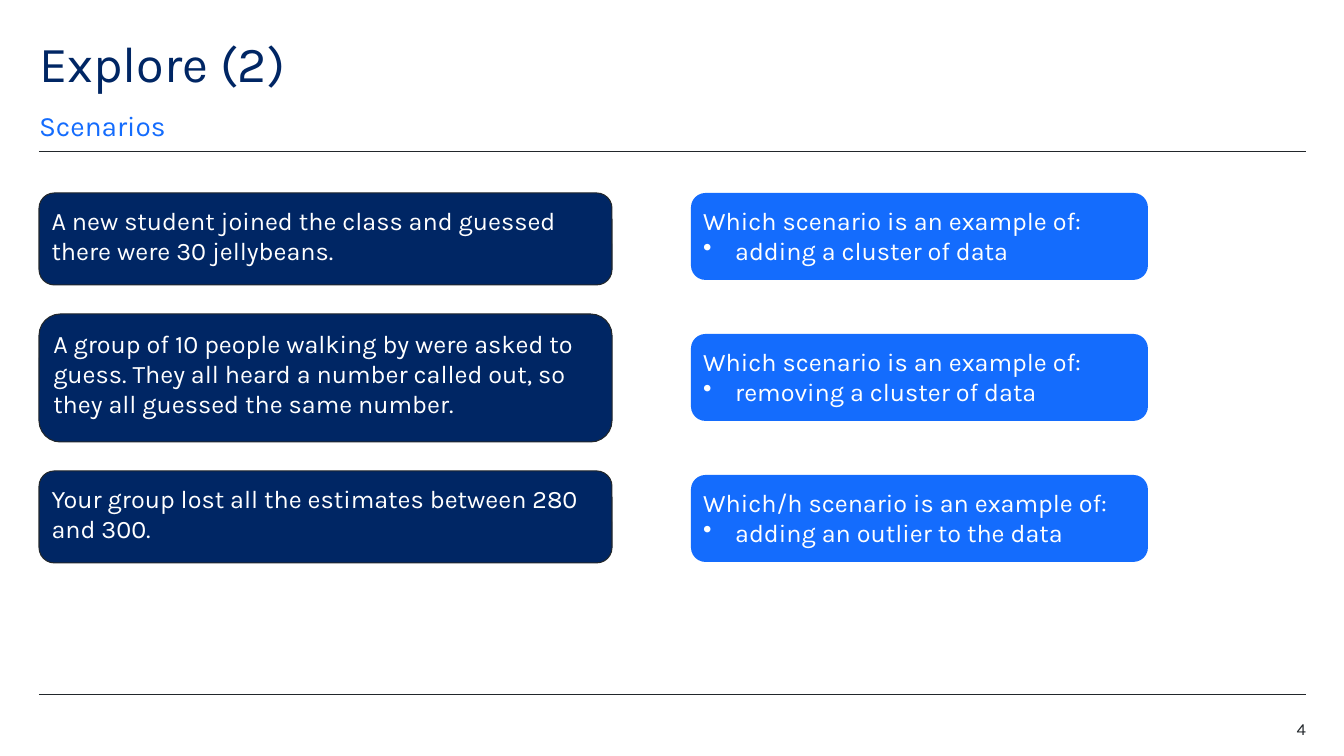
from dataclasses import dataclass

import pptx
import pptx.dml.color
import pptx.enum.shapes
import pptx.enum.text
import pptx.oxml.ns
import pptx.util
from lxml import etree

ANCHOR = pptx.enum.text.MSO_ANCHOR
ALIGN = pptx.enum.text.PP_ALIGN
EMU_PER_PX = 914400 / 100.8


@dataclass(frozen=True)
class Theme:
    font: str = "Karla"
    navy: str = "002664"
    blue: str = "146CFD"
    ink: str = "22272B"
    white: str = "FFFFFF"
    title: int = 36
    subtitle: int = 20
    body: int = 18
    small: int = 12


def px(n):
    return pptx.util.Emu(round(n * EMU_PER_PX))


def rgb(color):
    return pptx.dml.color.RGBColor.from_string(color)


def add_bullet(p, indent):
    pPr = p._p.get_or_add_pPr()
    pPr.set("marL", str(px(indent)))
    pPr.set("indent", str(-px(indent)))
    bu = etree.SubElement(pPr, pptx.oxml.ns.qn("a:buChar"))
    bu.set("char", "•")


class SlideBuilder:
    def __init__(self, prs, theme):
        self.theme = theme
        self.s = prs.slides.add_slide(prs.slide_layouts[6])

    def frame(self, sp, inset, anchor=ANCHOR.TOP):
        tf = sp.text_frame
        tf.word_wrap = True
        tf.vertical_anchor = anchor
        tf.margin_left = tf.margin_top = px(inset)
        tf.margin_right = tf.margin_bottom = px(inset)
        return tf

    def style(self, p, size, color, align=ALIGN.LEFT):
        p.alignment = align
        for r in p.runs:
            r.font.name = self.theme.font
            r.font.size = pptx.util.Pt(size)
            r.font.color.rgb = rgb(color)

    def text(self, box, text, size, color, anchor=ANCHOR.TOP, align=ALIGN.LEFT):
        sp = self.s.shapes.add_textbox(*map(px, box))
        p = self.frame(sp, 0, anchor).paragraphs[0]
        p.text = text
        self.style(p, size, color, align)
        return p

    def rule(self, x1, x2, y):
        line = self.s.shapes.add_connector(
            pptx.enum.shapes.MSO_CONNECTOR.STRAIGHT, px(x1), px(y), px(x2), px(y))
        line.line.color.rgb = rgb(self.theme.ink)
        line.line.width = pptx.util.Pt(0.5)
        etree.SubElement(line._element.spPr, pptx.oxml.ns.qn("a:effectLst"))

    def card(self, box, fill, text, bullet=None, outline=None):
        sp = self.s.shapes.add_shape(
            pptx.enum.shapes.MSO_SHAPE.ROUNDED_RECTANGLE, *map(px, box))
        sp.shadow.inherit = False
        sp.fill.solid()
        sp.fill.fore_color.rgb = rgb(fill)
        if outline:
            sp.line.color.rgb = rgb(outline)
            sp.line.width = pptx.util.Pt(0.75)
        else:
            sp.line.fill.background()
        tf = self.frame(sp, 8)
        tf.paragraphs[0].text = text
        if bullet:
            p = tf.add_paragraph()
            p.text = bullet
            add_bullet(p, 32)
        for p in tf.paragraphs:
            self.style(p, self.theme.body, self.theme.white)


SCENARIOS = [
    (92, "A new student joined the class and guessed there were 30 jellybeans."),
    (128, "A group of 10 people walking by were asked to guess. They all heard "
          "a number called out, so they all guessed the same number."),
    (92, "Your group lost all the estimates between 280 and 300."),
]
QUESTIONS = [
    ("Which scenario is an example of:", "adding a cluster of data"),
    ("Which scenario is an example of:", "removing a cluster of data"),
    ("Which/h scenario is an example of:", "adding an outlier to the data"),
]
LEFT, RIGHT = 39, 1306
CARDS_TOP, SCENARIO_GAP, QUESTION_STEP = 193, 29, 141


def main():
    prs = pptx.Presentation()
    prs.slide_width, prs.slide_height = px(1344), px(756)
    theme = Theme()
    b = SlideBuilder(prs, theme)

    for y in (151, 694):
        b.rule(LEFT, RIGHT, y)
    p = b.text((LEFT, 39, 1111, 60), "Explore (2)", theme.title, theme.navy)
    p.line_spacing = 0.9
    p = b.text((LEFT, 108, 1111, 34), "Scenarios", theme.subtitle, theme.blue,
               anchor=ANCHOR.BOTTOM)
    p.line_spacing = 1.5
    p.space_after = pptx.util.Pt(12)

    y = CARDS_TOP
    for height, scenario in SCENARIOS:
        b.card((LEFT, y, 573, height), theme.navy, scenario, outline=theme.ink)
        y += height + SCENARIO_GAP
    for i, (question, answer) in enumerate(QUESTIONS):
        b.card((691, CARDS_TOP + i * QUESTION_STEP, 457, 87), theme.blue,
               question, bullet=answer)

    b.text((RIGHT - 79, 719, 79, 20), "4", theme.small, theme.ink,
           align=ALIGN.RIGHT)
    prs.save("out.pptx")


if __name__ == "__main__":
    main()
